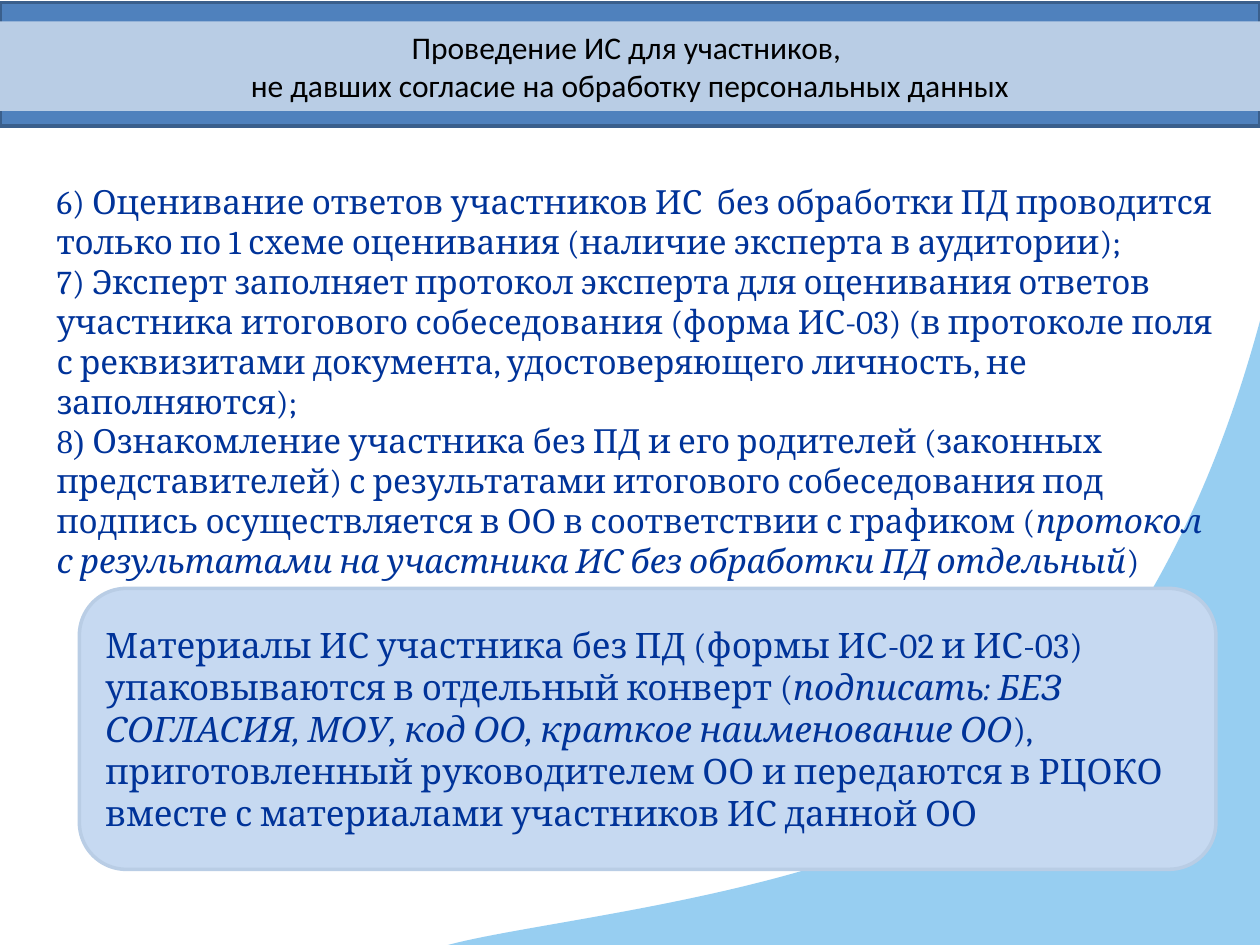
from dataclasses import dataclass

from lxml.etree import SubElement
from pptx import Presentation
from pptx.dml.color import RGBColor as Color
from pptx.enum.shapes import MSO_SHAPE as Shape
from pptx.enum.text import MSO_ANCHOR as Anchor, MSO_AUTO_SIZE as AutoSize, PP_ALIGN as Align
from pptx.oxml.ns import qn
from pptx.util import Inches, Pt


@dataclass(frozen=True)
class Theme:
    swoosh: Color = Color.from_string("74BEED")
    banner: Color = Color.from_string("4F81BD")
    banner_edge: Color = Color.from_string("3A5F8C")
    band: Color = Color.from_string("B9CDE5")
    note: Color = Color.from_string("C6D9F1")
    title: Color = Color.from_string("000000")
    text: Color = Color.from_string("003399")
    title_font: str = "Calibri"
    text_font: str = "Cambria"
    number_font: str = "Times New Roman"
    title_size: int = 18
    body_size: int = 19
    note_size: int = 20
    edge_width: int = 2


theme = Theme()


def paint(shape, fill, edge=None):
    shape.shadow.inherit = False
    shape.fill.solid()
    shape.fill.fore_color.rgb = fill
    if edge is None:
        shape.line.fill.background()
    else:
        shape.line.color.rgb = edge
        shape.line.width = Pt(theme.edge_width)


def write(para, spans, size):
    para.alignment = Align.LEFT
    para.font.size = Pt(size)
    para.font.name = theme.text_font
    para.font.color.rgb = theme.text
    for text, style in spans:
        span = para.add_run()
        span.text = text
        if style == "italic":
            span.font.italic = True
        elif style == "number":
            span.font.name = theme.number_font


deck = Presentation()
deck.slide_width, deck.slide_height = Inches(10), Inches(7.5)
page = deck.slides.add_slide(deck.slide_layouts[5])

start = (8.57, 7.84)
curve_points = [
    (7.21, 8.06), (3.36, 7.96), (3.31, 7.64),
    (3.26, 7.32), (7.07, 7.26), (8.24, 5.93),
    (10.65, 3.25), (9.98, -0.01), (11.05, 0.06),
    (12.12, 0.14), (11.86, 5), (11.44, 6.3),
    (11.03, 7.59), (9.92, 7.61), start,
]
builder = page.shapes.build_freeform(Inches(start[0]), Inches(start[1]))
builder.add_line_segments([(Inches(x), Inches(y)) for x, y in curve_points], close=True)
swoosh = builder.convert_to_shape()
paint(swoosh, theme.swoosh)
for tint in swoosh.element.spPr.iter(qn("a:srgbClr")):
    SubElement(tint, qn("a:alpha"), val="74000")
segments = list(swoosh.element.iter(qn("a:lnTo")))
for first, second, end in zip(segments[::3], segments[1::3], segments[2::3]):
    curve = first.makeelement(qn("a:cubicBezTo"))
    first.addprevious(curve)
    for segment in (first, second, end):
        curve.append(segment[0])
        segment.getparent().remove(segment)

body = page.shapes.add_textbox(Inches(0.35), Inches(1.39), Inches(9.45), Inches(2.98))
body.text_frame.word_wrap = True
body.text_frame.auto_size = AutoSize.SHAPE_TO_FIT_TEXT
items = [
    [("6) Оценивание ответов участников ИС  без обработки ПД проводится только по 1 схеме оценивания (наличие эксперта в аудитории);", None)],
    [("7) Эксперт заполняет протокол эксперта для оценивания ответов участника итогового собеседования (форма ИС-03) (в протоколе поля с реквизитами документа, удостоверяющего личность, не заполняются);", None)],
    [
        ("8) ", "number"),
        ("Ознакомление участника без ПД и его родителей (законных представителей) с результатами итогового собеседования под подпись осуществляется в ОО в соответствии с графиком (", None),
        ("протокол с результатами на участника ИС без обработки ПД отдельный", "italic"),
        (")", None),
    ],
]
for index, spans in enumerate(items):
    para = body.text_frame.add_paragraph() if index else body.text_frame.paragraphs[0]
    write(para, spans, theme.body_size)

banner = page.shapes.add_shape(Shape.RECTANGLE, 0, Inches(0.02), Inches(10), Inches(0.98))
paint(banner, theme.banner, theme.banner_edge)

title = page.shapes.title
banner.element.addnext(title.element)
title.left, title.top, title.width, title.height = 0, Inches(0.17), Inches(10), Inches(0.71)
title.fill.solid()
title.fill.fore_color.rgb = theme.band
title.text_frame.auto_size = AutoSize.NONE
title.text_frame.vertical_anchor = Anchor.TOP
title.text_frame.text = "Проведение ИС для участников, \vне давших согласие на обработку персональных данных"
heading = title.text_frame.paragraphs[0]
heading.alignment = Align.CENTER
heading.font.size = Pt(theme.title_size)
heading.font.name = theme.title_font
heading.font.color.rgb = theme.title

note = page.shapes.add_shape(Shape.ROUNDED_RECTANGLE, Inches(0.63), Inches(4.67), Inches(9.02), Inches(2.23))
paint(note, theme.note, theme.band)
note.text_frame.word_wrap = True
note.text_frame.vertical_anchor = Anchor.MIDDLE
note_spans = [
    ("Материалы ИС участника без ПД (формы ИС-02 и ИС-03) упаковываются в отдельный конверт (", None),
    ("подписать: БЕЗ СОГЛАСИЯ, МОУ, код ОО, краткое наименование ОО", "italic"),
    ("), приготовленный руководителем ОО и передаются в РЦОКО вместе с материалами участников ИС данной ОО", None),
]
write(note.text_frame.paragraphs[0], note_spans, theme.note_size)

deck.save("out.pptx")
